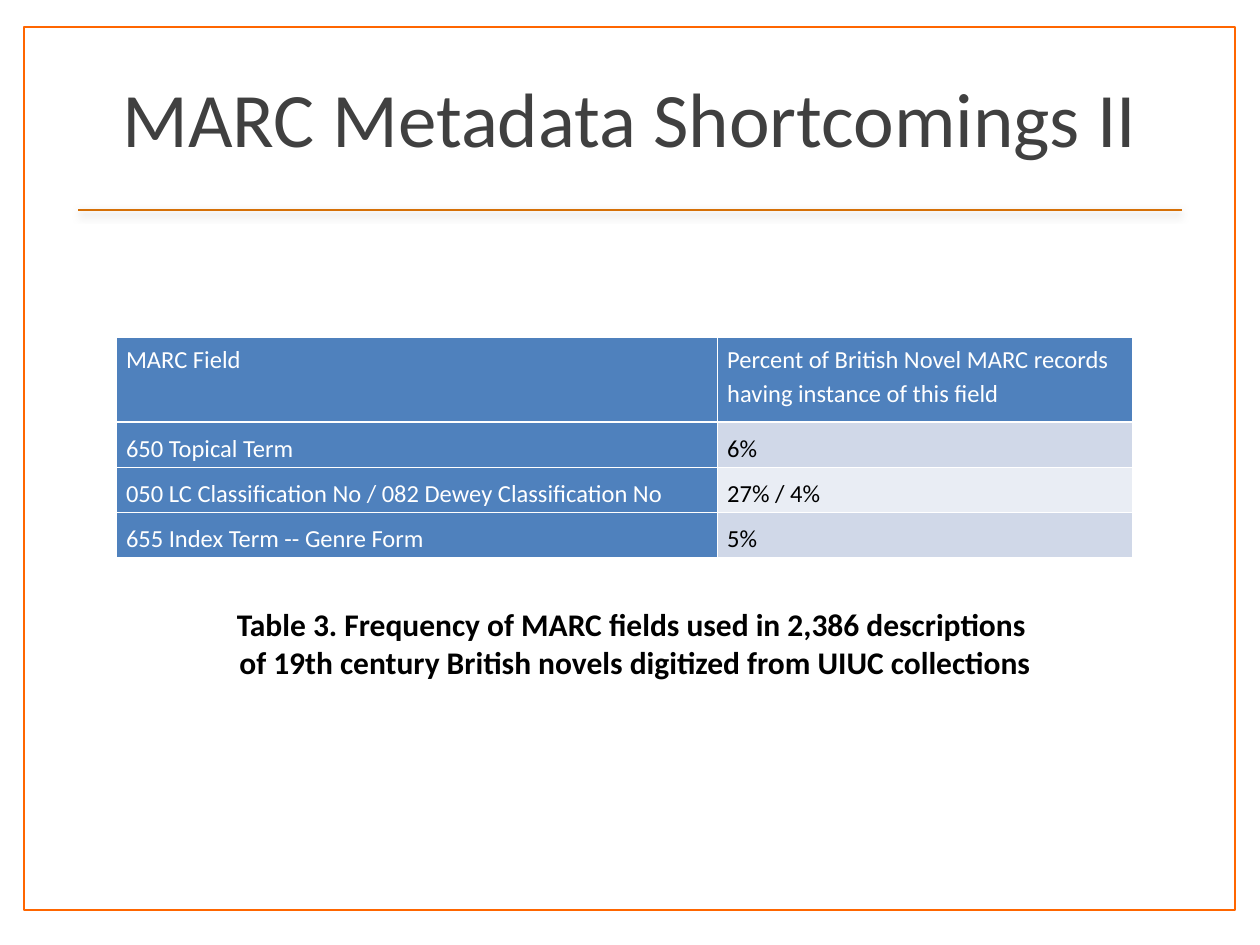
import dataclasses

import pptx
import pptx.dml.color
import pptx.enum.shapes
import pptx.enum.text
import pptx.oxml
import pptx.oxml.ns
import pptx.util
from pptx.util import Cm

ALIGN = pptx.enum.text.PP_ALIGN
ANCHOR = pptx.enum.text.MSO_ANCHOR


@dataclasses.dataclass(frozen=True)
class Theme:
    """Colours, font and type sizes of the slide."""
    font: str = "Calibri"
    title_size: int = 44
    caption_size: int = 18
    table_size: int = 14
    title: str = "404040"
    text: str = "000000"
    white: str = "FFFFFF"
    frame: str = "FF6600"
    rule: str = "D57007"
    header: str = "4F81BD"
    bands: tuple = ("D0D8E8", "E9EDF4")


THEME = Theme()
ROWS = [
    ("MARC Field", "Percent of British Novel MARC records having instance of this field"),
    ("650 Topical Term", "6%"),
    ("050 LC Classification No / 082 Dewey Classification No", "27% / 4%"),
    ("655 Index Term -- Genre Form", "5%"),
]
CAPTION = ("Table 3. Frequency of MARC fields used in 2,386 descriptions \v"
           "of 19th century British novels digitized from UIUC collections")


def rgb(color):
    """Return the colour object for a hex string."""
    return pptx.dml.color.RGBColor.from_string(color)


def add_xml(parent, xml):
    """Append a DrawingML fragment to an element."""
    ns = pptx.oxml.ns.nsdecls("a")
    parent.append(pptx.oxml.parse_xml(xml.replace(">", f" {ns}>", 1)))


def write(tf, text, size, color, bold=False, align=ALIGN.LEFT, spacing=None, after=None):
    """Fill a text frame with one formatted paragraph."""
    tf.word_wrap = True
    p = tf.paragraphs[0]
    p.text = text
    p.alignment = align
    if spacing:
        p.line_spacing = spacing
    if after is not None:
        p.space_after = pptx.util.Pt(after)
    for r in p.runs:
        r.font.name = THEME.font
        r.font.size = pptx.util.Pt(size)
        r.font.bold = bold
        r.font.color.rgb = rgb(color)


def add_frame(s, left, top, width, height):
    """Place the outlined page frame behind everything else."""
    sp = s.shapes.add_shape(pptx.enum.shapes.MSO_SHAPE.RECTANGLE, left, top, width, height)
    sp.shadow.inherit = False
    sp.fill.solid()
    sp.fill.fore_color.rgb = rgb(THEME.white)
    sp.line.color.rgb = rgb(THEME.frame)
    sp.line.width = pptx.util.Pt(1)
    s.shapes.element.insert(2, sp.element)


def add_heading(s, left, top, width, height):
    """Place the title and the shadowed rule beneath it."""
    sp = s.shapes.title
    sp.left, sp.top, sp.width, sp.height = left, top, width, height
    sp.text_frame.vertical_anchor = ANCHOR.MIDDLE
    write(sp.text_frame, "MARC Metadata Shortcomings II", THEME.title_size, THEME.title,
          align=ALIGN.CENTER)
    inset, y = Cm(0.31), top + height + Cm(0.3)
    rule = s.shapes.add_connector(pptx.enum.shapes.MSO_CONNECTOR.STRAIGHT,
                                  left + inset, y, left + width - inset, y)
    rule.line.color.rgb = rgb(THEME.rule)
    rule.line.width = pptx.util.Pt(1)
    add_xml(rule.element.spPr,
            '<a:effectLst><a:outerShdw blurRad="63500" dist="22860" dir="5400000" '
            'rotWithShape="0"><a:srgbClr val="000000"><a:alpha val="35000"/>'
            '</a:srgbClr></a:outerShdw></a:effectLst>')


def format_cell(cell, fill):
    """Set the margins, white borders and fill of a table cell."""
    cell.margin_left = cell.margin_right = Cm(0.2)
    cell.margin_top, cell.margin_bottom = Cm(0.08), 0
    tc_pr = cell._tc.get_or_add_tcPr()
    for side in "LRTB":
        add_xml(tc_pr, f'<a:ln{side} w="12700"><a:solidFill><a:srgbClr val="{THEME.white}"/>'
                       f'</a:solidFill></a:ln{side}>')
    cell.fill.solid()
    cell.fill.fore_color.rgb = rgb(fill)


def add_field_table(s, left, top, width, height):
    """Place the table of MARC fields and their frequencies."""
    table = s.shapes.add_table(len(ROWS), 2, left, top, width, height).table
    table.first_col = True
    table.columns[0].width = Cm(12.12)
    table.columns[1].width = width - Cm(12.12)
    row_height = Cm(0.91)
    for i, row in enumerate(ROWS):
        table.rows[i].height = row_height if i else height - row_height * (len(ROWS) - 1)
        for j, text in enumerate(row):
            cell = table.cell(i, j)
            is_value = i > 0 and j > 0
            format_cell(cell, THEME.bands[(i - 1) % 2] if is_value else THEME.header)
            cell.vertical_anchor = ANCHOR.MIDDLE if i else ANCHOR.TOP
            write(cell.text_frame, text, THEME.table_size,
                  THEME.text if is_value else THEME.white,
                  spacing=1.15, after=3 if i else 6)


def add_caption(s, left, top, width, height):
    """Place the centred table caption."""
    tf = s.shapes.add_textbox(left, top, width, height).text_frame
    write(tf, CAPTION, THEME.caption_size, THEME.text, bold=True, align=ALIGN.CENTER)


def main():
    """Build and save the slide."""
    prs = pptx.Presentation()
    prs.slide_width, prs.slide_height = Cm(25.4), Cm(19.05)
    s = prs.slides.add_slide(prs.slide_layouts[5])
    add_frame(s, Cm(0.49), Cm(0.55), Cm(24.41), Cm(17.8))
    add_heading(s, Cm(1.27), Cm(0.76), Cm(22.86), Cm(3.18))
    add_field_table(s, Cm(2.34), Cm(6.79), Cm(20.49), Cm(4.45))
    add_caption(s, Cm(3.18), Cm(12.07), Cm(19.25), Cm(1.8))
    prs.save("out.pptx")


if __name__ == "__main__":
    main()
